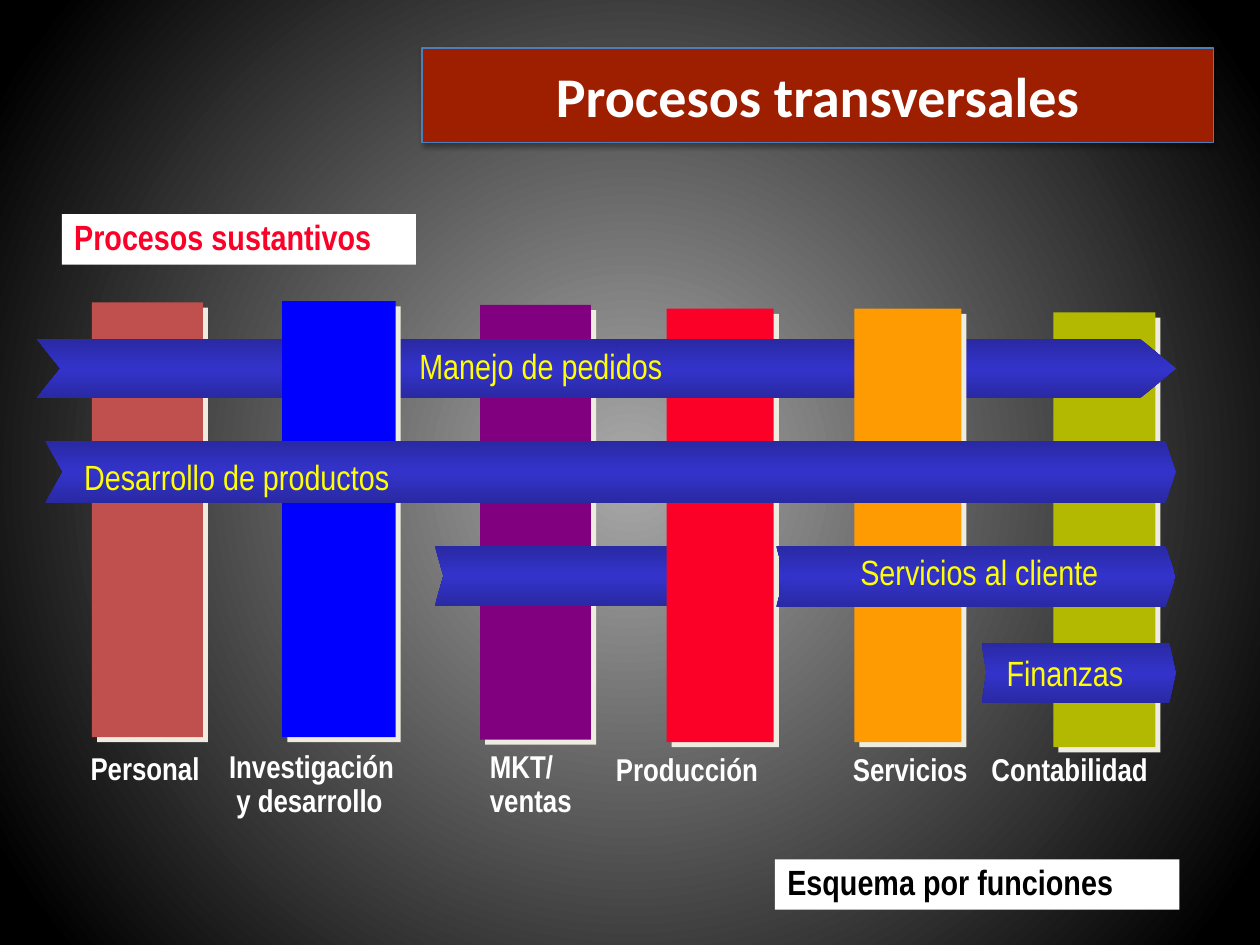
from dataclasses import dataclass

import pptx
import pptx.dml.color
import pptx.enum.shapes
import pptx.enum.text
import pptx.oxml
import pptx.oxml.ns
import pptx.util

COLORS = {
    "white": "FFFFFF", "black": "000000", "yellow": "FFFF00", "red": "FC0128",
    "brick": "C0504D", "blue": "0000FF", "purple": "800080", "orange": "FE9B03",
    "olive": "B3B900", "title": "9E1E00", "title_line": "4B7EBC", "cream": "EEECE1",
    "band_edge": "2929A3", "band_core": "3333CC", "back_core": "A6A6A6",
}
COLUMNS, ROWS = 100, 75
prs = pptx.Presentation()
prs.slide_width = pptx.util.Inches(10)
prs.slide_height = pptx.util.Inches(7.5)


@dataclass
class Bar:
    col: float
    row: float
    cols: float
    rows: float
    color: str


@dataclass
class Band:
    """Arrow with a notched tail and a pointed head."""
    col: float
    row: float
    cols: float
    rows: float
    head: float
    notch: float


@dataclass
class Label:
    text: str
    col: float
    row: float
    cols: float
    rows: float
    size: int = 18
    color: str = "white"
    bold: bool = True
    fill: str = ""
    wrap: bool = True
    indent: float = 0  # columns, for the lines after the first


def x(cols: float) -> int:
    return round(prs.slide_width * cols / COLUMNS)


def y(rows: float) -> int:
    return round(prs.slide_height * rows / ROWS)


def rgb(name: str) -> pptx.dml.color.RGBColor:
    return pptx.dml.color.RGBColor.from_string(COLORS[name])


def parse_a(xml: str):
    tag = xml[1:].split(" ")[0].split(">")[0].rstrip("/")
    return pptx.oxml.parse_xml(
        xml.replace(tag, f"{tag} {pptx.oxml.ns.nsdecls('a')}", 1))


def set_gradient(fill, element, stops: list, direction: str) -> None:
    fill.gradient()
    grad = element.find(".//" + pptx.oxml.ns.qn("a:gradFill"))
    grad.clear()
    stop_xml = "".join(
        f'<a:gs pos="{pos * 1000}"><a:srgbClr val="{COLORS[name]}"/></a:gs>'
        for pos, name in stops)
    grad.append(parse_a(f"<a:gsLst>{stop_xml}</a:gsLst>"))
    grad.append(parse_a(direction))


def set_shadow(sp, color: str, alpha: int, blur: float, dist: float, angle: int) -> None:
    sp.shadow.inherit = False
    effects = sp.element.spPr.find(pptx.oxml.ns.qn("a:effectLst"))
    effects.append(parse_a(
        f'<a:outerShdw blurRad="{pptx.util.Pt(blur)}" dist="{pptx.util.Pt(dist)}" '
        f'dir="{angle * 60000}" algn="ctr" rotWithShape="0">'
        f'<a:srgbClr val="{COLORS[color]}"><a:alpha val="{alpha * 1000}"/>'
        f"</a:srgbClr></a:outerShdw>"))


def draw_bar(s, bar: Bar) -> None:
    sp = s.shapes.add_shape(pptx.enum.shapes.MSO_SHAPE.RECTANGLE,
                            x(bar.col), y(bar.row), x(bar.cols), y(bar.rows))
    sp.fill.solid()
    sp.fill.fore_color.rgb = rgb(bar.color)
    sp.line.fill.background()
    set_shadow(sp, "cream", 100, 0, 4.2, 45)


def draw_band(s, band: Band) -> None:
    right, bottom = band.col + band.cols, band.row + band.rows
    middle = band.row + band.rows / 2
    outline = [(right - band.head, band.row), (right, middle),
               (right - band.head, bottom), (band.col, bottom),
               (band.col + band.notch, middle)]
    builder = s.shapes.build_freeform(x(band.col), y(band.row))
    builder.add_line_segments([(x(c), y(r)) for c, r in outline])
    sp = builder.convert_to_shape()
    set_gradient(sp.fill, sp.element.spPr,
                 [(0, "band_edge"), (50, "band_core"), (100, "band_edge")],
                 '<a:lin ang="5400000" scaled="0"/>')
    sp.line.fill.background()
    sp.shadow.inherit = False


def draw_label(s, label: Label) -> None:
    sp = s.shapes.add_textbox(x(label.col), y(label.row), x(label.cols), y(label.rows))
    if label.fill:
        sp.fill.solid()
        sp.fill.fore_color.rgb = rgb(label.fill)
    tf = sp.text_frame
    tf.word_wrap = label.wrap
    tf.auto_size = pptx.enum.text.MSO_AUTO_SIZE.SHAPE_TO_FIT_TEXT
    tf.text = label.text
    for i, p in enumerate(tf.paragraphs):
        p.line_spacing = 0.9
        if i and label.indent:
            p._p.get_or_add_pPr().set("marL", str(x(label.indent)))
        font = p.runs[0].font
        font.name = "Arial Narrow"
        font.size = pptx.util.Pt(label.size)
        font.bold = label.bold
        font.color.rgb = rgb(label.color)


def draw_title(s, text: str) -> None:
    sp = s.shapes.title
    sp.left, sp.top, sp.width, sp.height = x(33.5), y(3.8), x(62.8), y(7.5)
    sp.fill.solid()
    sp.fill.fore_color.rgb = rgb("title")
    sp.line.color.rgb = rgb("title_line")
    sp.line.width = pptx.util.Pt(0.75)
    set_shadow(sp, "black", 35, 3.1, 1.8, 90)
    tf = sp.text_frame
    tf.text = text
    tf.vertical_anchor = pptx.enum.text.MSO_ANCHOR.MIDDLE
    p = tf.paragraphs[0]
    p.alignment = pptx.enum.text.PP_ALIGN.CENTER
    font = p.runs[0].font
    font.name, font.size, font.bold = "Calibri", pptx.util.Pt(32), True
    font.color.rgb = rgb("white")


# Function bars and process bands, woven from back to front
WEAVE = [
    Bar(83.6, 24.8, 8.1, 34.5, "olive"),
    Bar(7.3, 24, 8.8, 34.5, "brick"),
    Bar(38.1, 24.2, 8.8, 34.5, "purple"),
    Band(77.9, 51, 15.4, 4.8, 0.5, 0.4),
    Band(34.5, 43.3, 31.1, 4.8, 0.9, 0.7),
    Band(2.9, 26.9, 90.4, 4.7, 2.8, 1.9),
    Bar(52.9, 24.5, 8.5, 34.4, "red"),
    Band(48.8, 26.9, 27.3, 4.7, 0.8, 0.6),
    Bar(22.4, 23.9, 9, 34.6, "blue"),
    Bar(67.8, 24.5, 8.5, 34.4, "orange"),
    Band(3.6, 35, 89.7, 4.9, 0.8, 1.4),
    Band(61.6, 43.3, 31.7, 4.9, 0.8, 0.7),
]
LABELS = [
    # Headings
    Label("Procesos sustantivos", 4.9, 17, 28.1, 4, 20, "red", fill="white"),
    Label("Esquema por funciones", 61.5, 68.2, 32.1, 4, 20, "black", fill="white"),
    # Functions
    Label("Personal", 6.2, 59.3, 10.8, 3.7, wrap=False),
    Label("Investigación\ny desarrollo", 17.2, 59.1, 20.7, 6.4, indent=0.57),
    Label("MKT/\nventas", 37.9, 59.1, 8.6, 6.4, wrap=False),
    Label("Producción", 47.9, 59.4, 17.8, 3.7),
    Label("Servicios", 66.7, 59.4, 11.2, 3.7, wrap=False),
    Label("Contabilidad", 77.7, 59.4, 18.5, 3.7),
    # Processes
    Label("Manejo de pedidos", 32.3, 27.2, 34, 4, 20, "yellow", False),
    Label("Desarrollo de productos", 5.7, 36, 35.6, 4, 20, "yellow", False),
    Label("Servicios al cliente", 67.3, 43.6, 25.1, 4, 20, "yellow", False),
    Label("Finanzas", 78.9, 51.6, 14.2, 4, 20, "yellow", False),
]


def main() -> None:
    s = prs.slides.add_slide(prs.slide_layouts[5])
    set_gradient(s.background.fill, s.element, [(2, "back_core"), (94, "black")],
                 '<a:path path="circle"><a:fillToRect l="50000" t="50000" '
                 'r="50000" b="50000"/></a:path>')
    draw_title(s, "Procesos transversales")
    for item in WEAVE:
        if isinstance(item, Bar):
            draw_bar(s, item)
        else:
            draw_band(s, item)
    for label in LABELS:
        draw_label(s, label)
    prs.save("out.pptx")


if __name__ == "__main__":
    main()
